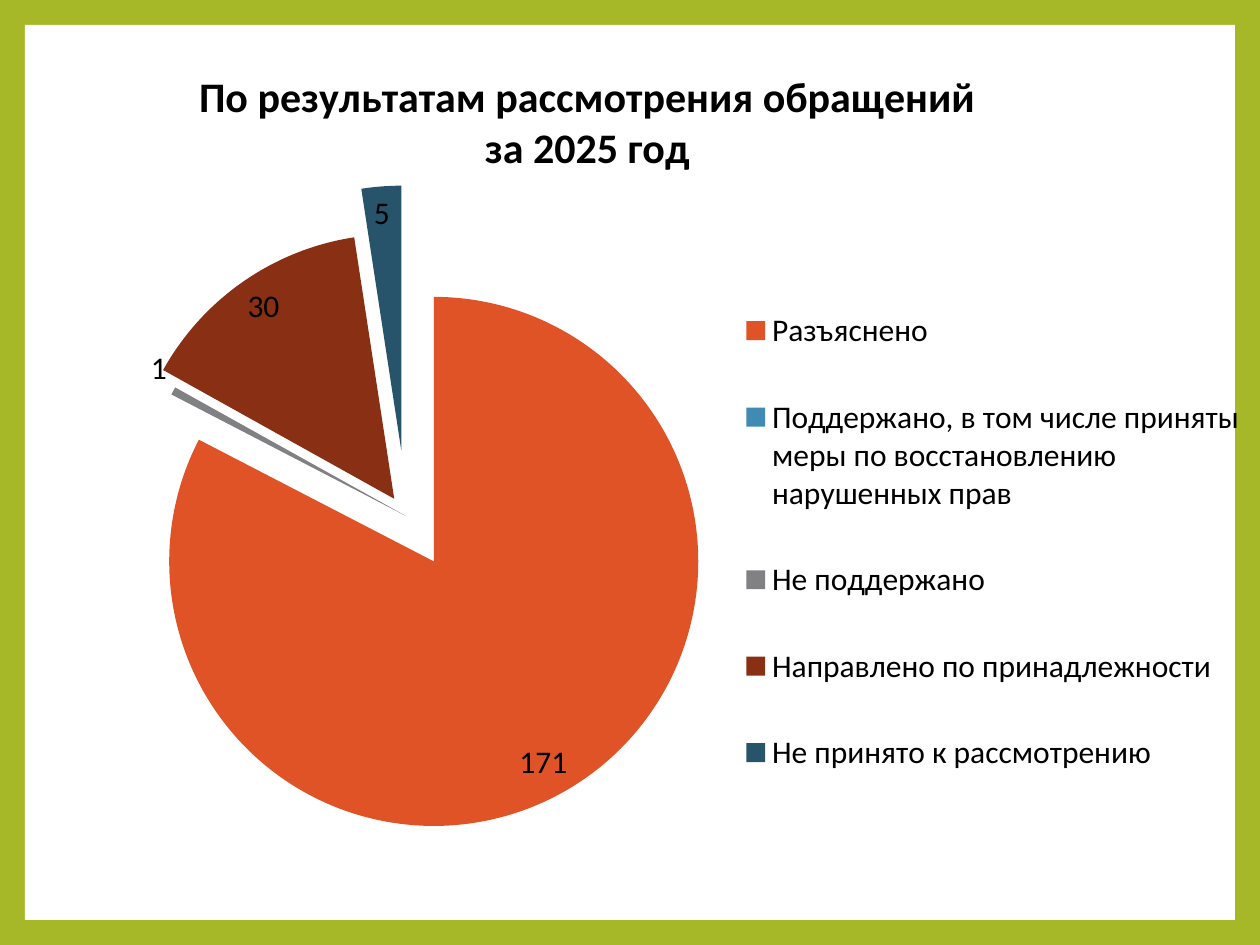
from lxml.etree import SubElement
from pptx import Presentation
from pptx.chart.data import CategoryChartData
from pptx.dml.color import RGBColor
from pptx.enum.chart import XL_CHART_TYPE as ChartType, XL_LABEL_POSITION as LabelPosition
from pptx.enum.chart import XL_LEGEND_POSITION as LegendPosition
from pptx.enum.shapes import MSO_SHAPE as Shape
from pptx.oxml import parse_xml
from pptx.oxml.ns import nsdecls, qn
from pptx.util import Pt

PX = 914400 // 126
SLIDE_W, SLIDE_H = 1260, 945
MARGIN = 25
CHART_TOP = 6
CHART_H = SLIDE_H - CHART_TOP

GREEN = RGBColor(0xA6, 0xB7, 0x27)
WHITE = RGBColor(0xFF, 0xFF, 0xFF)
BLACK = RGBColor(0, 0, 0)
ORANGE = RGBColor(0xDF, 0x53, 0x27)
BLUE = RGBColor(0x41, 0x8A, 0xB3)
GRAY = RGBColor(0x81, 0x81, 0x83)
BROWN = RGBColor(0x89, 0x30, 0x14)
NAVY = RGBColor(0x27, 0x53, 0x6B)

TITLE = ["По результатам рассмотрения обращений", "за 2025 год"]
OUTCOMES = [
    ("Разъяснено", 171, ORANGE, 20),
    ("Поддержано, в том числе приняты меры по восстановлению нарушенных прав", 0, BLUE, 0),
    ("Не поддержано", 1, GRAY, 0),
    ("Направлено по принадлежности", 30, BROWN, 8),
    ("Не принято к рассмотрению", 5, NAVY, 25),
]
OUTSIDE_LABEL = 2


def style(font, size, bold=False):
    font.name = "Calibri"
    font.size = Pt(size)
    font.bold = bold
    font.color.rgb = BLACK


def layout(target=None, **places):
    modes = "".join(f'<c:{axis}Mode val="edge"/>' for axis in "xy")
    values = "".join(f'<c:{key} val="{value}"/>' for key, value in places.items())
    inner = f'<c:layoutTarget val="{target}"/>' if target else ""
    return parse_xml(
        f'<c:layout {nsdecls("c")}><c:manualLayout>{inner}{modes}{values}'
        "</c:manualLayout></c:layout>"
    )


def place(parent, new_layout, before):
    for old in parent.findall(qn("c:layout")):
        parent.remove(old)
    parent.find(qn(before)).addprevious(new_layout)


def explode(parent, amount, before):
    offset = SubElement(parent, qn("c:explosion"))
    offset.set("val", str(amount))
    parent.find(qn(before)).addprevious(offset)


prs = Presentation()
prs.slide_width = SLIDE_W * PX
prs.slide_height = SLIDE_H * PX
slide = prs.slides.add_slide(prs.slide_layouts[6])
slide.background.fill.solid()
slide.background.fill.fore_color.rgb = GREEN

panel = slide.shapes.add_shape(
    Shape.RECTANGLE, MARGIN * PX, MARGIN * PX,
    (SLIDE_W - 2 * MARGIN) * PX, (SLIDE_H - 2 * MARGIN) * PX)
panel.shadow.inherit = False
panel.fill.solid()
panel.fill.fore_color.rgb = WHITE
panel.line.fill.background()

data = CategoryChartData()
data.categories = [name for name, *_ in OUTCOMES]
data.add_series("Series 1", [count for _, count, *_ in OUTCOMES])
chart = slide.shapes.add_chart(
    ChartType.PIE, 0, CHART_TOP * PX, SLIDE_W * PX, CHART_H * PX, data).chart
style(chart.font, 18)

title_frame = chart.chart_title.text_frame
title_frame.text = "\n".join(TITLE)
for paragraph in title_frame.paragraphs:
    style(paragraph.font, 24, True)
    for run in paragraph.runs:
        style(run.font, 24, True)
title = chart.chart_title._element
place(title, layout(x=0.155, y=0.065), "c:overlay")
title.find(qn("c:overlay")).set("val", "1")

chart.has_legend = True
chart.legend.position = LegendPosition.RIGHT
chart.legend.include_in_layout = False
style(chart.legend.font, 18)
place(chart.legend._element, layout(x=0.576, y=0.274, w=0.424, h=0.593), "c:overlay")

plot = chart.plots[0]
plot.vary_by_categories = True
place(chart._chartSpace.chart.plotArea,
      layout("inner", x=0.06, y=0.19, w=0.525, h=0.707), "c:pieChart")

series = plot.series[0]
for index, (_, _, color, explosion) in enumerate(OUTCOMES):
    fill = series.points[index].format.fill
    fill.solid()
    fill.fore_color.rgb = color
    explode(fill._xPr.getparent(), explosion, "c:spPr")
explode(series._element, max(explosion for *_, explosion in OUTCOMES), "c:dPt")

labels = series.data_labels
labels.show_value = True
labels.number_format = "0;;;"
labels.number_format_is_linked = False
labels.position = LabelPosition.INSIDE_END
style(labels.font, 18)
outside_label = series.points[OUTSIDE_LABEL].data_label
style(outside_label.font, 18)
outside_label.position = LabelPosition.OUTSIDE_END

prs.save("out.pptx")
